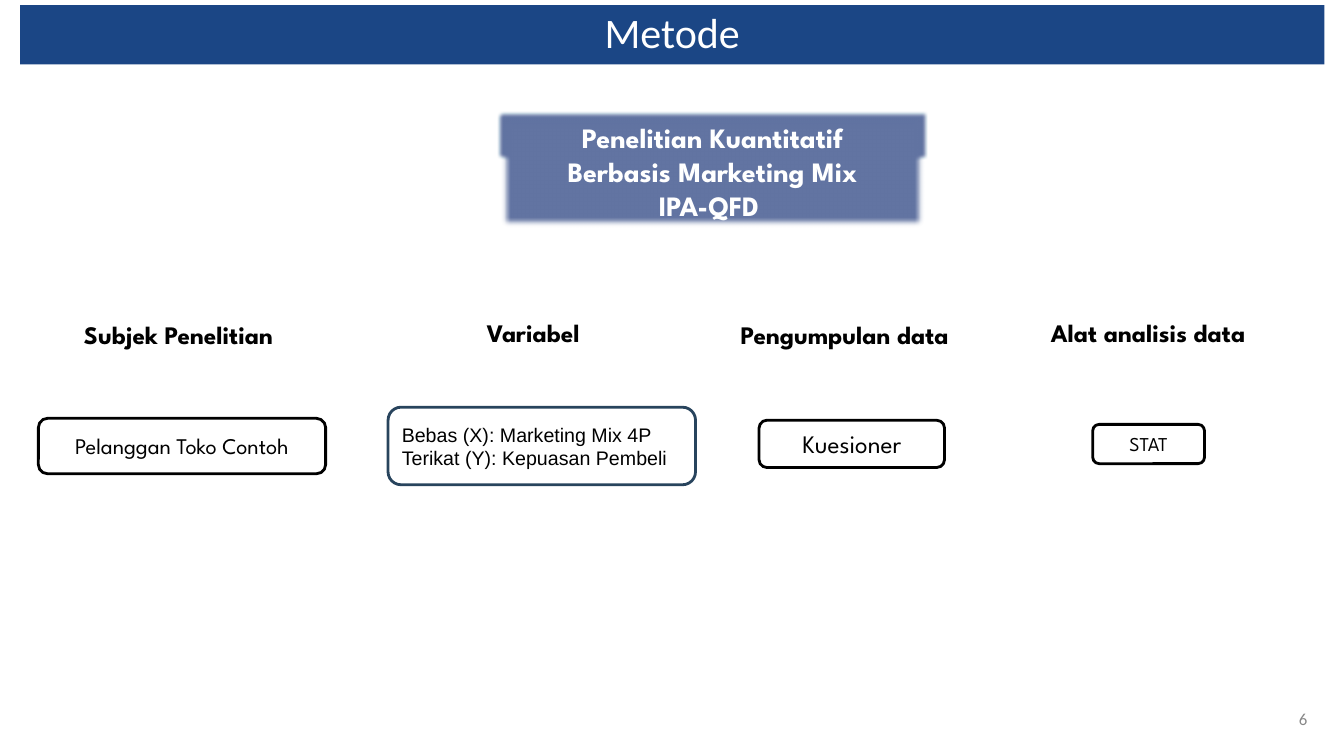
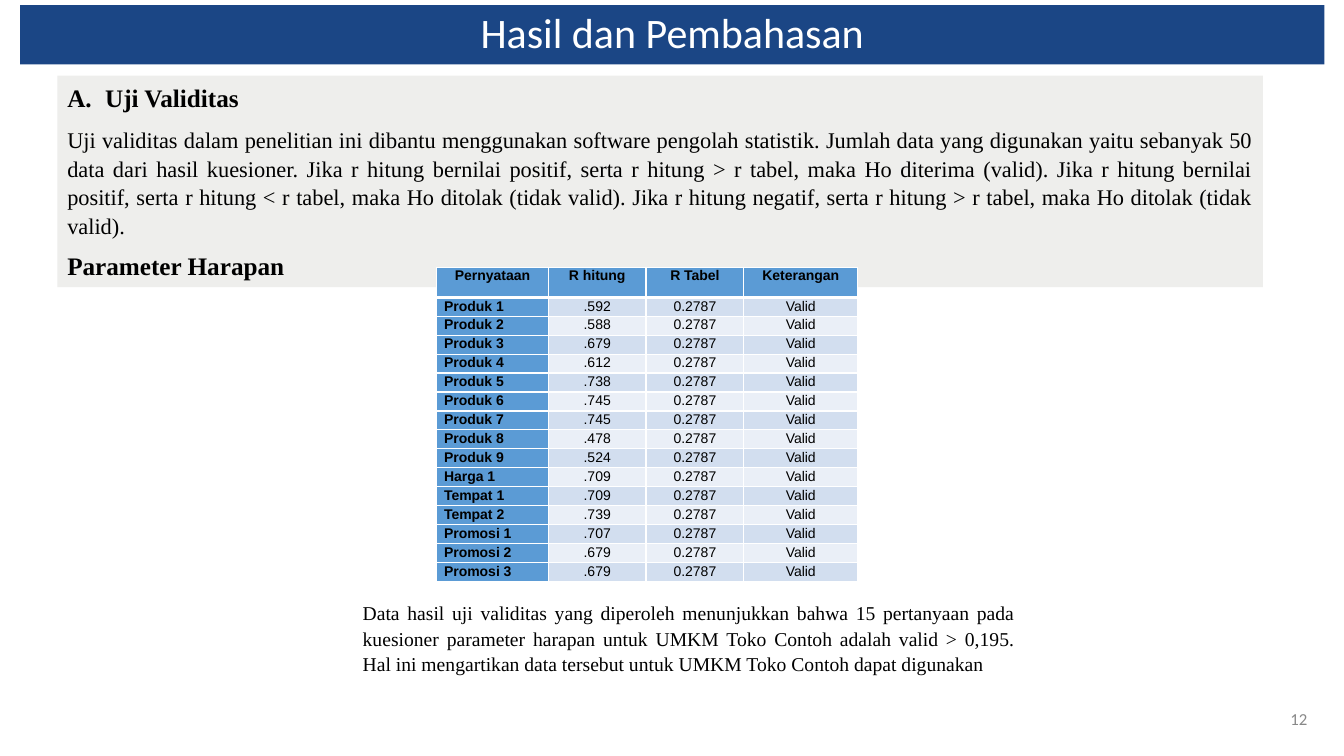
"""Build two research slides: the method and the validity test."""
from dataclasses import dataclass

from lxml import etree
from pptx import Presentation
from pptx.dml.color import RGBColor
from pptx.enum.shapes import MSO_SHAPE
from pptx.enum.text import MSO_ANCHOR, MSO_AUTO_SIZE, PP_ALIGN
from pptx.oxml.ns import qn
from pptx.util import Pt

RECT, ROUNDED, PENTAGON = MSO_SHAPE.RECTANGLE, MSO_SHAPE.ROUNDED_RECTANGLE, MSO_SHAPE.PENTAGON
TOP, MIDDLE = MSO_ANCHOR.TOP, MSO_ANCHOR.MIDDLE
CENTER, JUSTIFY, RIGHT = PP_ALIGN.CENTER, PP_ALIGN.JUSTIFY, PP_ALIGN.RIGHT
GROW, FIXED = MSO_AUTO_SIZE.SHAPE_TO_FIT_TEXT, MSO_AUTO_SIZE.NONE


@dataclass(frozen=True)
class Theme:
    """Colours, fonts and type sizes."""
    white: str = "FFFFFF"
    black: str = "000000"
    navy: str = "1B4685"
    slate: str = "6274A2"
    slate_edge: str = "43739E"
    ink_blue: str = "28445D"
    panel: str = "EEEEEC"
    grey: str = "888888"
    table_blue: str = "5B9BD5"
    bands: tuple = ("D2DEEF", "EAEFF7")
    title_font: str = "Calibri"
    display_font: str = "League Spartan"
    serif_font: str = "Times New Roman"
    plain_font: str = "Arial"
    title_size: int = 30
    banner_size: int = 20
    heading_size: int = 18
    body_size: int = 16
    note_size: int = 14
    number_size: int = 12
    cell_size: int = 10


@dataclass(frozen=True)
class Para:
    """One paragraph with its look."""
    text: str
    size: int
    font: str
    color: str = Theme.black
    bold: bool = False
    align: PP_ALIGN = CENTER
    spacing: float = 1.0
    after: int = 0
    numbered: bool = False


class Deck:
    """Holds the theme and the slide being filled."""

    def __init__(self, theme):
        self.theme = theme
        self.show = Presentation()
        self.show.slide_width, self.show.slide_height = Pt(960), Pt(540)
        self.slide = None

    def start_slide(self, title, number):
        """Add a slide with its title band and number."""
        t = self.theme
        self.slide = self.show.slides.add_slide(self.show.slide_layouts[6])
        self.text((900, 499, 41, 29),
                  [Para(number, t.number_size, t.title_font, t.grey, align=RIGHT)], MIDDLE)
        self.shape(RECT, (14.4, 3.6, 931.6, 42.4), t.navy,
                   [Para(title, t.title_size, t.title_font, t.white, spacing=0.9)])

    def fill_text(self, frame, paras):
        """Fill a text frame run by run."""
        for i, para in enumerate(paras):
            line = frame.paragraphs[0] if i == 0 else frame.add_paragraph()
            line.alignment = para.align
            line.line_spacing = para.spacing
            line.space_after = Pt(para.after)
            if para.numbered:
                props = line._p.get_or_add_pPr()
                props.set("marL", str(Pt(27)))
                props.set("indent", str(-Pt(27)))
                etree.SubElement(props, qn("a:buFont"), typeface="+mj-lt")
                etree.SubElement(props, qn("a:buAutoNum"), type="alphaUcPeriod")
            run = line.add_run()
            run.text = para.text
            run.font.size, run.font.name, run.font.bold = Pt(para.size), para.font, para.bold
            run.font.color.rgb = RGBColor.from_string(para.color)

    def text(self, box, paras, anchor=TOP, fit=FIXED):
        """Add a wrapped text box."""
        frame = self.slide.shapes.add_textbox(*map(Pt, box)).text_frame
        frame.word_wrap, frame.auto_size, frame.vertical_anchor = True, fit, anchor
        self.fill_text(frame, paras)

    def shape(self, kind, box, fill, paras=(), edge=None, anchor=MIDDLE, fit=FIXED,
              soft=0, turn=0):
        """Add a filled shape, with text, outline or soft edge if asked."""
        item = self.slide.shapes.add_shape(kind, *map(Pt, box))
        item.shadow.inherit = False
        item.rotation = turn
        item.fill.solid()
        item.fill.fore_color.rgb = RGBColor.from_string(fill)
        if edge:
            item.line.color.rgb = RGBColor.from_string(edge)
            item.line.width = Pt(2)
        else:
            item.line.fill.background()
        if soft:
            effects = item._element.spPr.find(qn("a:effectLst"))
            etree.SubElement(effects, qn("a:softEdge"), rad=str(Pt(soft)))
        frame = item.text_frame
        frame.word_wrap, frame.auto_size, frame.vertical_anchor = True, fit, anchor
        self.fill_text(frame, paras)

    def borders(self, cell, bottom):
        """Draw white cell borders."""
        props = cell._tc.get_or_add_tcPr()
        for side, width in (("L", 1), ("R", 1), ("T", 1), ("B", bottom)):
            line = etree.SubElement(props, qn(f"a:ln{side}"), w=str(Pt(width)))
            solid = etree.SubElement(line, qn("a:solidFill"))
            etree.SubElement(solid, qn("a:srgbClr"), val=self.theme.white)

    def table(self, corner, widths, heights, rows):
        """Add a table with a header row, a label column and banded values."""
        t = self.theme
        grid = self.slide.shapes.add_table(
            len(rows), len(widths), *map(Pt, (*corner, sum(widths), sum(heights)))).table
        for column, width in zip(grid.columns, widths):
            column.width = Pt(width)
        for r, (row, height) in enumerate(zip(rows, heights)):
            grid.rows[r].height = Pt(height)
            for c, value in enumerate(row):
                cell = grid.cell(r, c)
                cell.margin_left = cell.margin_right = Pt(5.4)
                cell.margin_top = cell.margin_bottom = 0
                key = r == 0 or c == 0
                self.borders(cell, 3 if r == 0 else 1)
                cell.fill.solid()
                cell.fill.fore_color.rgb = RGBColor.from_string(
                    t.table_blue if key else t.bands[(r - 1) % 2])
                align = JUSTIFY if r and c == 0 else CENTER
                self.fill_text(cell.text_frame, [Para(value, t.cell_size, t.plain_font, bold=key,
                                                      align=align, spacing=1.07)])


def build_method(deck):
    """Fill the method slide."""
    t = deck.theme
    deck.start_slide("Metode", "6")
    deck.shape(PENTAGON, (477.4, -40.3, 63.4, 305.3), t.slate, edge=t.slate_edge, soft=2.5, turn=90)
    approach = ("Penelitian Kuantitatif", "Berbasis Marketing Mix", "IPA-QFD ")
    deck.shape(RECT, (356.4, 82.8, 305.3, 81.4), t.slate,
               [Para(line, t.banner_size, t.display_font, t.white, True) for line in approach],
               anchor=TOP, fit=GROW, soft=5)

    def detail(text, size):
        """Give the single centred line of a method box."""
        return [Para(text, size, t.display_font)]

    variables = [Para(line, t.note_size, t.plain_font, align=JUSTIFY)
                 for line in ("Bebas (X): Marketing Mix 4P", "Terikat (Y): Kepuasan Pembeli")]
    columns = (
        ("Subjek Penelitian", (23.8, 219.6), (27.4, 298.8, 205.2, 39.6), t.black,
         detail("Pelanggan Toko Contoh", t.body_size)),
        ("Variabel", (277.2, 218.2), (277.2, 290.9, 219.6, 55.4), t.ink_blue, variables),
        ("Pengumpulan data", (499.7, 219.6), (542.2, 300.2, 132.5, 33.8), t.black,
         detail("Kuesioner", t.heading_size)),
        ("Alat analisis data", (716.4, 218.2), (780.5, 303.1, 79.9, 28.1), t.black,
         detail("STAT", t.note_size)),
    )
    for heading, corner, box, edge, content in columns:
        deck.shape(ROUNDED, (*corner, 207.4, 38.9), t.white,
                   [Para(heading, t.heading_size, t.display_font, bold=True)])
        deck.shape(ROUNDED, box, t.white, content, edge)


def build_results(deck):
    """Fill the validity test slide."""
    t = deck.theme
    deck.start_slide("Hasil dan Pembahasan", "12")
    explanation = (
        "Uji validitas dalam penelitian ini dibantu menggunakan software pengolah statistik. "
        "Jumlah data yang digunakan yaitu sebanyak 50 data dari hasil kuesioner. "
        "Jika r hitung bernilai positif, serta r hitung > r tabel, maka Ho diterima (valid). "
        "Jika r hitung bernilai positif, serta r hitung < r tabel, maka Ho ditolak (tidak valid). "
        "Jika r hitung negatif, serta r hitung > r tabel, maka Ho ditolak (tidak valid).")
    deck.shape(RECT, (41, 54, 861.1, 151.2), t.panel, [
        Para("Uji Validitas", t.heading_size, t.serif_font, bold=True, align=JUSTIFY,
             spacing=1.07, after=8, numbered=True),
        Para(explanation, t.body_size, t.serif_font, align=JUSTIFY, spacing=1.07, after=8),
        Para("Parameter Harapan", t.heading_size, t.serif_font, bold=True, align=JUSTIFY),
    ], anchor=TOP, fit=GROW)

    scores = {
        "Produk": (".592", ".588", ".679", ".612", ".738", ".745", ".745", ".478", ".524"),
        "Harga": (".709",),
        "Tempat": (".709", ".739"),
        "Promosi": (".707", ".679", ".679"),
    }
    rows = [("Pernyataan", "R hitung", "R Tabel", "Keterangan")]
    rows += [(f"{topic} {i}", score, "0.2787", "Valid")
             for topic, values in scores.items() for i, score in enumerate(values, 1)]
    deck.table((311.8, 190.8), (79.9, 69.8, 69.8, 81.4),
               [21.6] + [13.54] * (len(rows) - 1), rows)

    conclusion = (
        "Data hasil uji validitas yang diperoleh menunjukkan bahwa 15 pertanyaan pada kuesioner "
        "parameter harapan untuk UMKM Toko Contoh adalah valid > 0,195. Hal ini mengartikan "
        "data tersebut untuk UMKM Toko Contoh dapat digunakan")
    deck.text((252, 424.8, 480.2, 60.5),
              [Para(conclusion, t.note_size, t.serif_font, align=JUSTIFY, spacing=1.07, after=8)],
              fit=GROW)


def main():
    """Build and save the deck."""
    deck = Deck(Theme())
    build_method(deck)
    build_results(deck)
    deck.show.save("out.pptx")


if __name__ == "__main__":
    main()
